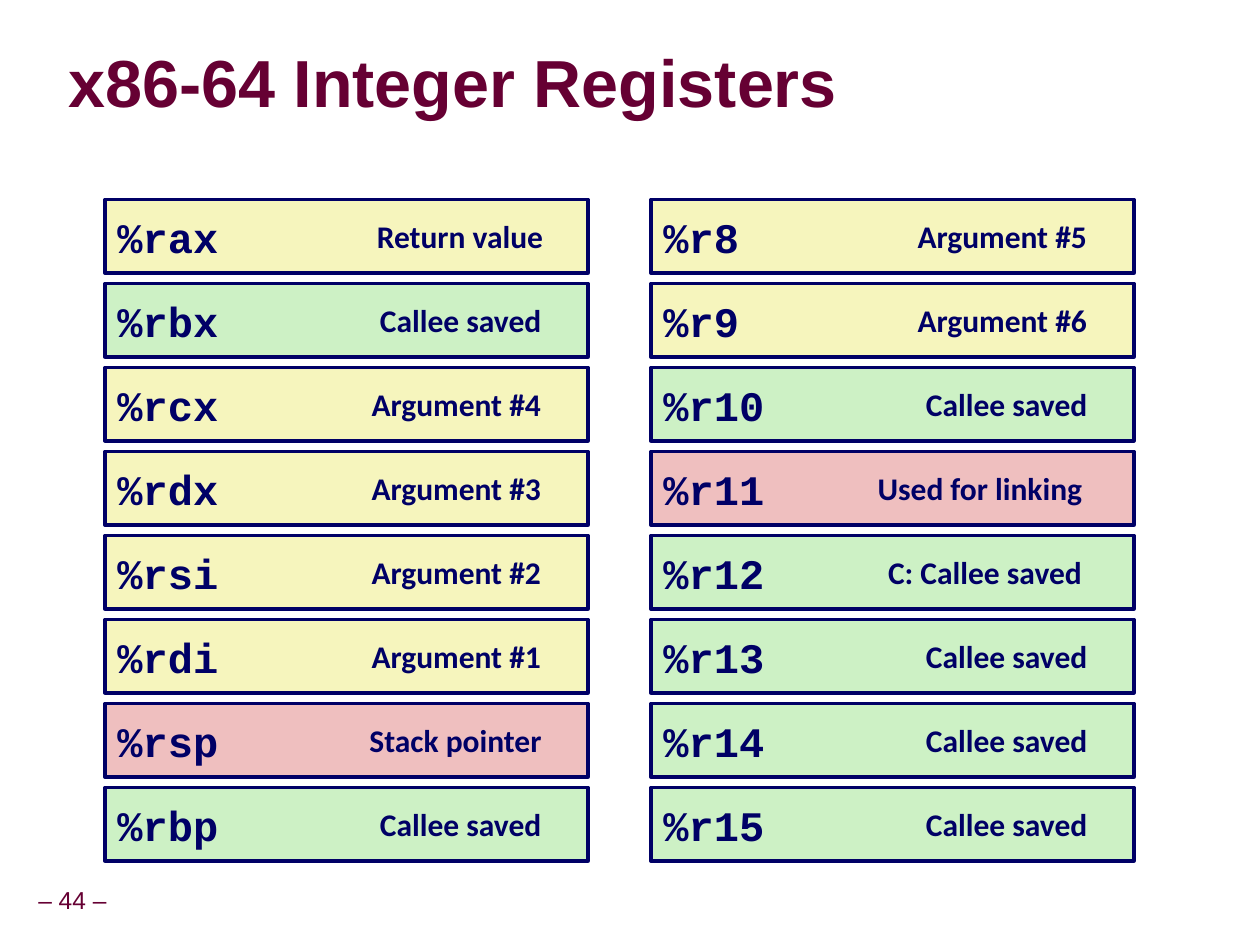
from dataclasses import dataclass

from pptx import Presentation
from pptx.dml.color import RGBColor
from pptx.enum.shapes import MSO_SHAPE as Shape
from pptx.enum.text import MSO_ANCHOR as Anchor, MSO_AUTO_SIZE as AutoSize, PP_ALIGN as Align
from pptx.util import Inches, Pt


@dataclass(frozen=True)
class Theme:
    maroon: str = "660033"
    navy: str = "000066"
    argument: str = "F6F5BD"
    saved: str = "CDF1C5"
    special: str = "EFBFBF"
    heading_font: str = "Arial"
    register_font: str = "Courier New"
    role_font: str = "Calibri"
    title_size: int = 38
    register_size: int = 24
    role_size: int = 18
    number_size: int = 14
    border: int = 2


THEME = Theme()

# The slide is a grid of 120 columns by 90 rows, 12 to the inch.
UNIT = Inches(1) // 12
COLUMNS, ROWS = 120, 90
REGISTER_WIDTH, REGISTER_HEIGHT, REGISTER_PITCH = 46, 7, 8
BANK_TOP, BANK_LEFTS = 19, (10, 62)

BANKS = (
    (
        ("%rax", "Return value", THEME.argument),
        ("%rbx", "Callee saved", THEME.saved),
        ("%rcx", "Argument #4", THEME.argument),
        ("%rdx", "Argument #3", THEME.argument),
        ("%rsi", "Argument #2", THEME.argument),
        ("%rdi", "Argument #1", THEME.argument),
        ("%rsp", "Stack pointer", THEME.special),
        ("%rbp", "Callee saved", THEME.saved),
    ),
    (
        ("%r8", "Argument #5", THEME.argument),
        ("%r9", "Argument #6", THEME.argument),
        ("%r10", "Callee saved", THEME.saved),
        ("%r11", "Used for linking", THEME.special),
        ("%r12", "C: Callee saved", THEME.saved),
        ("%r13", "Callee saved", THEME.saved),
        ("%r14", "Callee saved", THEME.saved),
        ("%r15", "Callee saved", THEME.saved),
    ),
)

# Left offset inside the register and width, in grid columns, by first word.
ROLE_EXTENTS = {
    "Return": (24.7, 24.1),
    "Callee": (25, 23.6),
    "Argument": (24.2, 24.8),
    "Stack": (24, 25.1),
    "Used": (20.4, 29.2),
    "C:": (21.4, 28.1),
}


def grid(*lengths):
    return [round(length * UNIT) for length in lengths]


def write(shape, text, *, font, size, color, bold=True, align=Align.LEFT,
          anchor=Anchor.MIDDLE, wrap=False, spacing=None, inset=0.1):
    frame = shape.text_frame
    frame.auto_size = AutoSize.NONE
    frame.word_wrap = wrap
    frame.vertical_anchor = anchor
    frame.margin_left = frame.margin_right = Inches(inset)
    frame.margin_top = frame.margin_bottom = Inches(0.05)
    paragraph = frame.paragraphs[0]
    paragraph.alignment = align
    paragraph.line_spacing = spacing
    run = paragraph.add_run()
    run.text = text
    run.font.name = font
    run.font.size = Pt(size)
    run.font.bold = bold
    run.font.color.rgb = RGBColor.from_string(color)


def place_title(slide, box, text):
    title = slide.shapes.title
    title.left, title.top, title.width, title.height = grid(*box)
    write(title, text, font=THEME.heading_font, size=THEME.title_size,
          color=THEME.maroon, wrap=True, spacing=0.87)


def place_page_number(slide, box, text):
    number = slide.shapes.add_textbox(*grid(*box))
    write(number, text, font=THEME.heading_font, size=THEME.number_size,
          color=THEME.maroon, bold=False, align=Align.CENTER, spacing=0.9, inset=0.05)


def place_register(slide, box, name, role, fill):
    left, top, _, _ = box
    register = slide.shapes.add_shape(Shape.RECTANGLE, *grid(*box))
    register.shadow.inherit = False
    register.fill.solid()
    register.fill.fore_color.rgb = RGBColor.from_string(fill)
    register.line.color.rgb = RGBColor.from_string(THEME.navy)
    register.line.width = Pt(THEME.border)
    write(register, name, font=THEME.register_font, size=THEME.register_size,
          color=THEME.navy)

    offset, width = ROLE_EXTENTS[role.split()[0]]
    role_label = slide.shapes.add_textbox(*grid(left + offset, top + 1.05, width, 4.8))
    write(role_label, role, font=THEME.role_font, size=THEME.role_size,
          color=THEME.navy, anchor=Anchor.TOP)


def place_bank(slide, left, top, registers):
    """Stack one column of registers downward from the given corner."""
    for row, register in enumerate(registers):
        box = (left, top + row * REGISTER_PITCH, REGISTER_WIDTH, REGISTER_HEIGHT)
        place_register(slide, box, *register)


def main():
    deck = Presentation()
    deck.slide_width, deck.slide_height = grid(COLUMNS, ROWS)
    slide = deck.slides.add_slide(deck.slide_layouts.get_by_name("Title Only"))
    place_title(slide, (5.3, 3.2, 114.4, 10.2), "x86-64 Integer Registers")
    for left, registers in zip(BANK_LEFTS, BANKS):
        place_bank(slide, left, BANK_TOP, registers)
    place_page_number(slide, (-1.1, 84, 16, 3.7), "– 44 –")
    deck.save("out.pptx")


if __name__ == "__main__":
    main()
